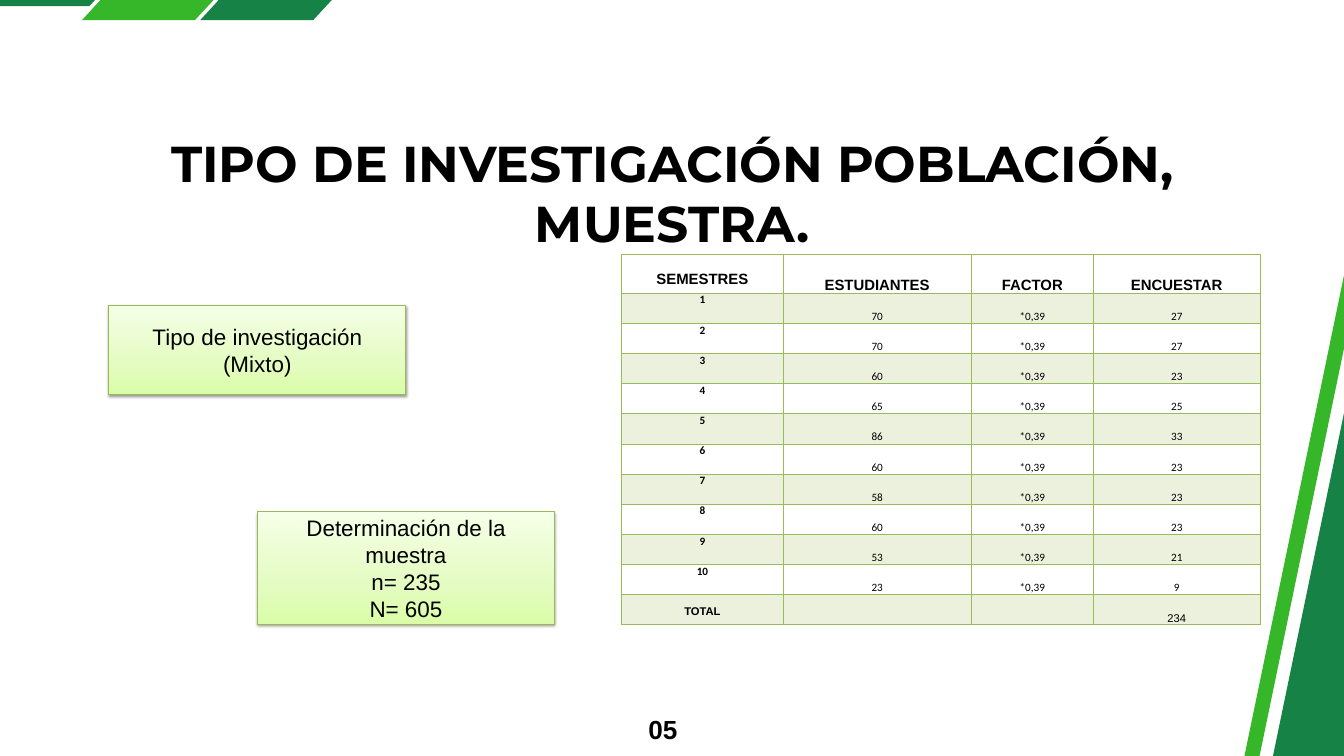
from copy import deepcopy

from lxml.etree import SubElement
from pptx import Presentation
from pptx.dml.color import RGBColor
from pptx.enum.shapes import MSO_SHAPE
from pptx.enum.text import MSO_ANCHOR, MSO_AUTO_SIZE, PP_ALIGN
from pptx.oxml.ns import qn
from pptx.util import Cm, Pt

DARK_GREEN = RGBColor(0x16, 0x82, 0x46)
BRIGHT_GREEN = RGBColor(0x35, 0xB7, 0x29)
TABLE_GREEN = RGBColor(0x9B, 0xBB, 0x59)
BOX_BORDER = RGBColor(0x98, 0xB9, 0x55)
BOX_GRADIENT = [
    (0, RGBColor(0xDA, 0xFD, 0xA7)),
    (0.35, RGBColor(0xE4, 0xFC, 0xC2)),
    (1, RGBColor(0xF5, 0xFF, 0xE7)),
]
BLACK = RGBColor(0, 0, 0)


def add_band(corners, color, rotation=0):
    """Draw a decorative green band from its corners in centimetres."""
    points = [(Cm(x), Cm(y)) for x, y in corners]
    builder = slide.shapes.build_freeform(*points[0])
    builder.add_line_segments(points[1:], close=True)
    band = builder.convert_to_shape()
    band.rotation = rotation
    band.shadow.inherit = False
    band.fill.solid()
    band.fill.fore_color.rgb = color
    band.line.fill.background()


def write(paragraph, text, size, font="Arial", bold=False, align=PP_ALIGN.CENTER):
    paragraph.alignment = align
    run = paragraph.add_run()
    run.text = text
    run.font.name = font
    run.font.size = Pt(size)
    run.font.bold = bold
    run.font.color.rgb = BLACK


presentation = Presentation()
presentation.slide_width = Cm(50.8)
presentation.slide_height = Cm(28.58)
slide = presentation.slides.add_slide(presentation.slide_layouts[5])

# Green bands at the top left and along the right edge
add_band([(-4.55, -2.11), (5.51, -2.11), (3.38, 0.23), (-6.68, 0.23)], DARK_GREEN)
for shift, color in [(0, BRIGHT_GREEN), (4.47, DARK_GREEN)]:
    corners = [(6.2, -2.62), (10.49, -2.62), (7.37, 0.76), (3.1, 0.76)]
    add_band([(x + shift, y) for x, y in corners], color)
for left, top, height, color in [
    (35.2, 13.59, 11.84, DARK_GREEN),
    (28.6, 18.08, 0.56, BRIGHT_GREEN),
]:
    right, bottom = left + 41.68, top + height
    corners = [(left, top), (right, top), (right, bottom), (left, bottom)]
    add_band(corners, color, rotation=281.7)

# Title and page number
title = slide.shapes.title
title.left, title.top, title.width, title.height = Cm(6.15), Cm(4.98), Cm(38.53), Cm(4.62)
page_number = slide.shapes.add_textbox(Cm(24.18), Cm(26.77), Cm(1.42), Cm(1.27))
for holder in (title, page_number):
    frame = holder.text_frame
    frame.margin_left = frame.margin_top = frame.margin_right = frame.margin_bottom = 0
    frame.vertical_anchor = MSO_ANCHOR.TOP
    frame.word_wrap = True
    frame.auto_size = MSO_AUTO_SIZE.SHAPE_TO_FIT_TEXT
write(title.text_frame.paragraphs[0], "TIPO DE INVESTIGACIÓN POBLACIÓN, MUESTRA.",
      54, "Montserrat", bold=True)
page_line = page_number.text_frame.paragraphs[0]
page_line.line_spacing = Pt(39.2)
write(page_line, "05", 28, bold=True, align=PP_ALIGN.RIGHT)

# Research type and sample boxes
for left, top, height, lines in [
    (4.11, 11.53, 3.38, ["Tipo de investigación", "(Mixto)"]),
    (9.73, 19.35, 4.24, ["Determinación de la muestra", "n= 235", "N= 605"]),
]:
    box = slide.shapes.add_shape(MSO_SHAPE.RECTANGLE, Cm(left), Cm(top), Cm(11.23), Cm(height))
    box.fill.gradient()
    box.fill.gradient_angle = 90
    stop_list = box.element.spPr.find(".//" + qn("a:gsLst"))
    stop_list.append(deepcopy(stop_list[0]))
    for stop, (position, color) in zip(box.fill.gradient_stops, BOX_GRADIENT):
        stop.position = position
        stop.color.rgb = color
    box.line.color.rgb = BOX_BORDER
    box.line.width = Pt(0.75)
    box.shadow.inherit = False
    effects = box.element.spPr.find(qn("a:effectLst"))
    shadow = SubElement(effects, qn("a:outerShdw"), blurRad=str(Pt(3.1)),
                        dist=str(Pt(1.6)), dir="5400000", rotWithShape="0")
    shadow_color = SubElement(shadow, qn("a:srgbClr"), val=str(BLACK))
    SubElement(shadow_color, qn("a:alpha"), val="38000")
    frame = box.text_frame
    frame.word_wrap = True
    frame.vertical_anchor = MSO_ANCHOR.MIDDLE
    for index, line in enumerate(lines):
        paragraph = frame.add_paragraph() if index else frame.paragraphs[0]
        write(paragraph, line, 24)

# Sample by semester
students = [70, 70, 60, 65, 86, 60, 58, 60, 53, 23]
surveyed = [27, 27, 23, 25, 33, 23, 23, 23, 21, 9]
rows = [("SEMESTRES", "ESTUDIANTES", "FACTOR", "ENCUESTAR")]
for semester, (count, sample) in enumerate(zip(students, surveyed), start=1):
    rows.append((str(semester), str(count), "*0,39", str(sample)))
rows.append(("TOTAL", "", "", str(sum(surveyed))))
last_row = len(rows) - 1

column_widths = [6.1, 7.11, 4.62, 6.3]
table = slide.shapes.add_table(len(rows), len(column_widths), Cm(23.5), Cm(9.6),
                               Cm(sum(column_widths)), Cm(14)).table
table.first_row = False
table.horz_banding = False
for column, width in zip(table.columns, column_widths):
    column.width = Cm(width)

for row_index, values in enumerate(rows):
    is_header, is_total = row_index == 0, row_index == last_row
    table.rows[row_index].height = Cm(1.49 if is_header else 1.14)
    for column_index, value in enumerate(values):
        cell = table.cell(row_index, column_index)
        cell.margin_left = cell.margin_right = Cm(0.18)
        cell.margin_top = cell.margin_bottom = 0
        cell.vertical_anchor = MSO_ANCHOR.BOTTOM
        if column_index == 0:
            cell.vertical_anchor = MSO_ANCHOR.TOP
            cell.margin_top = Cm(0.63 if is_header else 0.41 if is_total else 0)
        if value:
            write(cell.text_frame.paragraphs[0], value, 16 if is_header else 12,
                  "Arial" if is_header or is_total else "Calibri",
                  bold=is_header or column_index == 0)

        properties = cell._tc.get_or_add_tcPr()
        for side in ("lnL", "lnR", "lnT", "lnB"):
            under_header = (row_index, side) in [(0, "lnB"), (1, "lnT")]
            border = SubElement(properties, qn("a:" + side), w=str(Pt(2 if under_header else 1)))
            border_fill = SubElement(border, qn("a:solidFill"))
            SubElement(border_fill, qn("a:srgbClr"), val=str(TABLE_GREEN))
        if row_index % 2:
            cell.fill.solid()
            cell.fill.fore_color.rgb = TABLE_GREEN
            fill_color = properties.find(qn("a:solidFill")).find(qn("a:srgbClr"))
            SubElement(fill_color, qn("a:alpha"), val="20000")
        else:
            cell.fill.background()

presentation.save("out.pptx")
